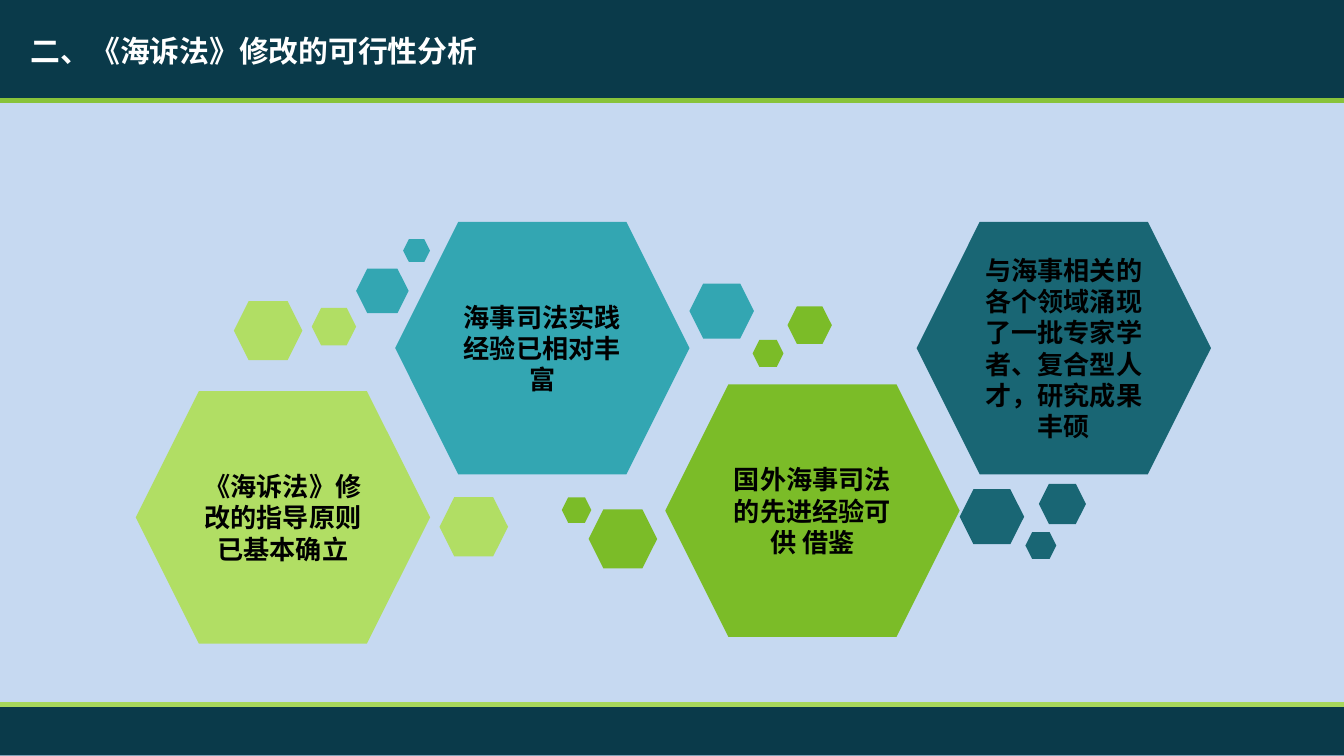
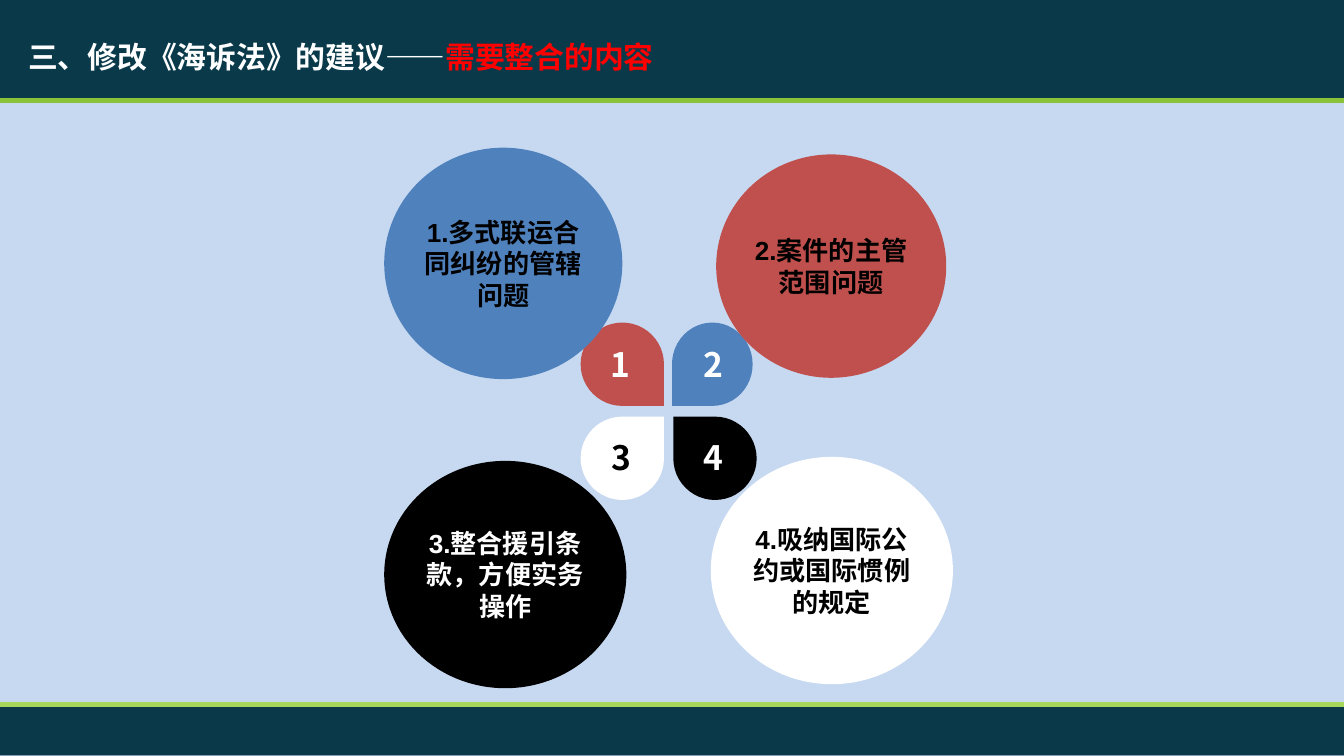
from lxml import etree
from pptx import Presentation
from pptx import util as u
from pptx.dml.color import RGBColor
from pptx.enum import shapes, text
from pptx.oxml.ns import qn

PX = 9144  # 100 px to the inch
SANS, LATIN = "Noto Sans CJK SC", "Arial"
KIND = shapes.MSO_SHAPE
COLOURS = {
    "sky": "C6D9F1", "navy": "0A3A4A", "top rule": "88C33A", "bottom rule": "A7D75B",
    "lime": "B1DE64", "teal": "33A6B2", "green": "7BBC28", "petrol": "196674",
    "blue": "4F81BD", "brick": "C0504D", "red": "FF0000",
    "black": "000000", "white": "FFFFFF",
}
# left, top, colour, text
TOPICS = [
    (101, 291, "lime", "《海诉法》修改的指导原则已基本确立"),
    (294, 165, "teal", "海事司法实践经验已相对丰富"),
    (495, 286, "green", "国外海事司法的先进经验可供 借鉴"),
    (682, 165, "petrol", "与海事相关的各个领域涌现了一批专家学者、复合型人才，研究成果丰硕"),
]
# colour: left, top, width, height of each small hexagon
ACCENTS = {
    "lime": [(174, 224, 51, 44), (327, 370, 51, 44), (232, 229, 33, 28)],
    "green": [(438, 379, 51, 44), (586, 228, 33, 28), (418, 370, 22, 19), (560, 253, 23, 20)],
    "teal": [(513, 211, 48, 41), (300, 178, 20, 17), (265, 200, 39, 33)],
    "petrol": [(714, 364, 48, 41), (773, 360, 35, 30), (763, 396, 23, 20)],
}
# place, fill, text colour, text
PROPOSALS = [
    ((288, 112, 173, 168), "blue", "black", "1.多式联运合同纠纷的管辖\n问题"),
    ((535, 117, 167, 162), "brick", "black", "2.案件的主管\n范围问题"),
    ((288, 345, 176, 165), "black", "white", "3.整合援引条款，方便实务操作"),
    ((531, 342, 176, 165), "white", "black", "4.吸纳国际公约或国际惯例的规定"),
]
# place, rotation, left of the number, fill, text colour, number
UPPER_PETALS = [
    ((432, 240, 62, 62), 90, 443, "brick", "white", "1"),
    ((500, 240, 60, 62), 180, 512, "blue", "white", "2"),
]
LOWER_PETALS = [
    ((432, 310, 62, 62), 0, 444, "white", "black", "3"),
    ((501, 310, 62, 62), 270, 512, "black", "white", "4"),
]


def px(*lengths):
    return [u.Emu(length * PX) for length in lengths]


def colour(name):
    return RGBColor.from_string(COLOURS[name])


def format_span(span, size, name, latin):
    span.font.size = u.Pt(size)
    span.font.bold = True
    span.font.color.rgb = colour(name)
    span.font.name = latin
    east_asian = etree.SubElement(span.font._element, qn("a:ea"))
    east_asian.set("typeface", SANS)


def add_figure(slide, kind, place, fill, outline=0):
    figure = slide.shapes.add_shape(kind, *px(*place))
    figure.shadow.inherit = False
    figure.fill.solid()
    figure.fill.fore_color.rgb = colour(fill)
    if outline:
        figure.line.color.rgb = colour(fill)
        figure.line.width = u.Pt(outline)
    else:
        figure.line.fill.background()
    return figure


def write_centred(figure, words, size, name, latin=SANS, insets=(10, 5), wrap=True):
    frame = figure.text_frame
    frame.text = words
    frame.word_wrap = wrap
    frame.vertical_anchor = text.MSO_ANCHOR.MIDDLE
    frame.margin_left = frame.margin_right = u.Emu(insets[0] * PX)
    frame.margin_top = frame.margin_bottom = u.Emu(insets[1] * PX)
    for para in frame.paragraphs:
        para.alignment = text.PP_ALIGN.CENTER
        for span in para.runs:
            format_span(span, size, name, latin)


def add_rule(slide, top, name):
    rule = slide.shapes.add_connector(shapes.MSO_CONNECTOR.STRAIGHT, *px(-1, top, 1001, top))
    rule.line.color.rgb = colour(name)
    rule.line.width = u.Pt(2.5)
    etree.SubElement(rule._element.spPr, qn("a:effectLst"))


def add_title(slide, place, spans, latin):
    title = slide.shapes.title
    title.left, title.top, title.width, title.height = px(*place)
    slide.shapes._spTree.append(title._element)  # in front of the band
    frame = title.text_frame
    frame.word_wrap = True
    frame.auto_size = text.MSO_AUTO_SIZE.NONE
    frame.vertical_anchor = text.MSO_ANCHOR.TOP
    para = frame.paragraphs[0]
    para.alignment = text.PP_ALIGN.LEFT
    for words, name in spans:
        span = para.add_run()
        span.text = words
        format_span(span, 16, name, latin)


def add_slide(deck, title_place, title_spans, title_font):
    """Add a slide with the shared background, bands, rules and title."""
    slide = deck.slides.add_slide(deck.slide_layouts[5])
    slide.background.fill.solid()
    slide.background.fill.fore_color.rgb = colour("sky")
    add_figure(slide, KIND.RECTANGLE, (-1, -2, 1002, 75), "navy")
    add_rule(slide, 75, "top rule")
    add_figure(slide, KIND.RECTANGLE, (-1, 524, 1002, 38), "navy")
    add_rule(slide, 524, "bottom rule")
    add_title(slide, title_place, title_spans, title_font)
    return slide


def add_petals(slide, petals, number_top):
    for place, rotation, number_left, fill, ink, number in petals:
        petal = add_figure(slide, KIND.TEAR, place, fill)
        petal.rotation = rotation
        label = add_figure(slide, KIND.RECTANGLE, (number_left, number_top, 37, 40), fill)
        write_centred(label, number, 18, ink, wrap=False)


def build_feasibility(deck):
    slide = add_slide(deck, (13, 19, 442, 37),
                      [("二、《海诉法》修改的可行性分析", "white")], LATIN)
    for left, top, fill, words in TOPICS:
        topic = add_figure(slide, KIND.HEXAGON, (left, top, 219, 188), fill)
        write_centred(topic, words, 14, "black")
    for fill, places in ACCENTS.items():
        for place in places:
            add_figure(slide, KIND.HEXAGON, place, fill)


def build_proposals(deck):
    slide = add_slide(deck, (11, 24, 670, 70),
                      [("三、修改《海诉法》的建议——", "white"), ("需要整合的内容", "red")], SANS)
    add_petals(slide, UPPER_PETALS, 251)
    for place, fill, ink, words in PROPOSALS:
        circle = add_figure(slide, KIND.OVAL, place, fill, outline=3)
        write_centred(circle, words, 14, ink, LATIN, insets=(0, 4))
    add_petals(slide, LOWER_PETALS, 320)


def main():
    deck = Presentation()
    deck.slide_width = u.Emu(1000 * PX)
    deck.slide_height = u.Emu(deck.slide_width * 9 // 16)
    build_feasibility(deck)
    build_proposals(deck)
    deck.save("out.pptx")


if __name__ == "__main__":
    main()
